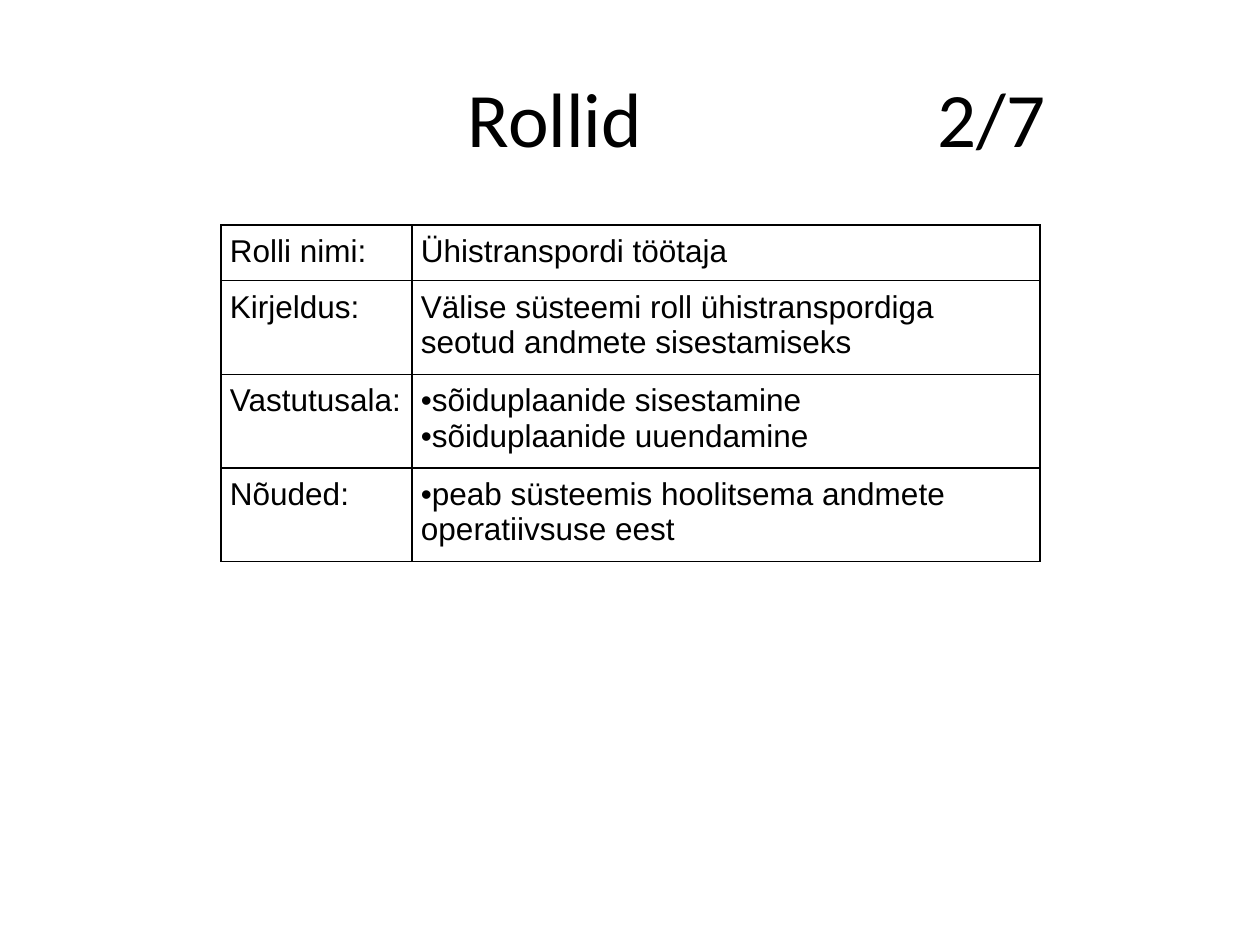
from lxml import etree
from pptx import Presentation
from pptx.dml.color import RGBColor
from pptx.enum.text import MSO_ANCHOR, PP_ALIGN
from pptx.oxml.ns import qn
from pptx.util import Emu, Pt

MIDDLE = MSO_ANCHOR.MIDDLE
LEFT = PP_ALIGN.LEFT
PX = 914400 / 126
COLORS = {"text": "000000", "border": "000000", "background": "FFFFFF"}
BULLET = "•"


def px(length):
    return Emu(round(length * PX))


class SlideBuilder:
    title_font, title_size = "Calibri", 44
    body_font, body_size = "Arial", 18
    cell_inset = 9
    border_width = 0.75

    def __init__(self, slide):
        self.slide = slide
        fill = slide.background.fill
        fill.solid()
        fill.fore_color.rgb = RGBColor.from_string(COLORS["background"])

    def run(self, paragraph, text, font, size):
        run = paragraph.add_run()
        run.text = text
        run.font.name = font
        run.font.size = Pt(size)
        run.font.color.rgb = RGBColor.from_string(COLORS["text"])

    def title(self, left, top, width, height, parts):
        box = self.slide.shapes.add_textbox(px(left), px(top), px(width), px(height))
        frame = box.text_frame
        frame.word_wrap = True
        frame.vertical_anchor = MIDDLE
        frame.margin_left = frame.margin_right = px(0)
        paragraph = frame.paragraphs[0]
        paragraph.alignment = LEFT
        stops = etree.SubElement(paragraph._p.get_or_add_pPr(), qn("a:tabLst"))
        for position, text in parts:
            etree.SubElement(stops, qn("a:tab"), pos=str(px(position - left)), algn="l")
            self.run(paragraph, "\t" + text, self.title_font, self.title_size)

    def borders(self, cell):
        properties = cell._tc.get_or_add_tcPr()
        for index, side in enumerate(("lnL", "lnR", "lnT", "lnB")):
            line = etree.Element(qn("a:" + side), w=str(Pt(self.border_width)))
            fill = etree.SubElement(line, qn("a:solidFill"))
            etree.SubElement(fill, qn("a:srgbClr"), val=COLORS["border"])
            properties.insert(index, line)

    def cell(self, cell, lines):
        cell.margin_left = cell.margin_right = px(self.cell_inset)
        cell.margin_top = cell.margin_bottom = px(self.cell_inset)
        cell.fill.background()
        self.borders(cell)
        frame = cell.text_frame
        for index, line in enumerate(lines):
            paragraph = frame.add_paragraph() if index else frame.paragraphs[0]
            if line.startswith(BULLET):
                properties = paragraph._p.get_or_add_pPr()
                etree.SubElement(properties, qn("a:buFont"), typeface=self.body_font)
                etree.SubElement(properties, qn("a:buChar"), char=BULLET)
            self.run(paragraph, line.removeprefix(BULLET), self.body_font, self.body_size)

    def table(self, left, top, height, widths, rows):
        holder = self.slide.shapes.add_table(
            len(rows), len(widths), px(left), px(top), px(sum(widths)), px(height)
        )
        table = holder.table
        table.first_row = table.horz_banding = False
        for column, width in zip(table.columns, widths):
            column.width = px(width)
        for row, contents in zip(table.rows, rows):
            row.height = px(0)
            for cell, lines in zip(row.cells, contents):
                self.cell(cell, lines)
        holder.height = px(height)


def main():
    presentation = Presentation()
    presentation.slide_width, presentation.slide_height = px(1260), px(945)
    builder = SlideBuilder(presentation.slides.add_slide(presentation.slide_layouts[6]))
    builder.title(63, 38, 1134, 157, [(468, "Rollid"), (938, "2/7")])
    role = [
        (["Rolli nimi:"], ["Ühistranspordi töötaja"]),
        (["Kirjeldus:"],
         ["Välise süsteemi roll ühistranspordiga seotud andmete sisestamiseks"]),
        (["Vastutusala:"],
         ["•sõiduplaanide sisestamine", "•sõiduplaanide uuendamine"]),
        (["Nõuded:"],
         ["•peab süsteemis hoolitsema andmete operatiivsuse eest"]),
    ]
    builder.table(221, 225, 320, [191, 628], role)
    presentation.save("out.pptx")


if __name__ == "__main__":
    main()
